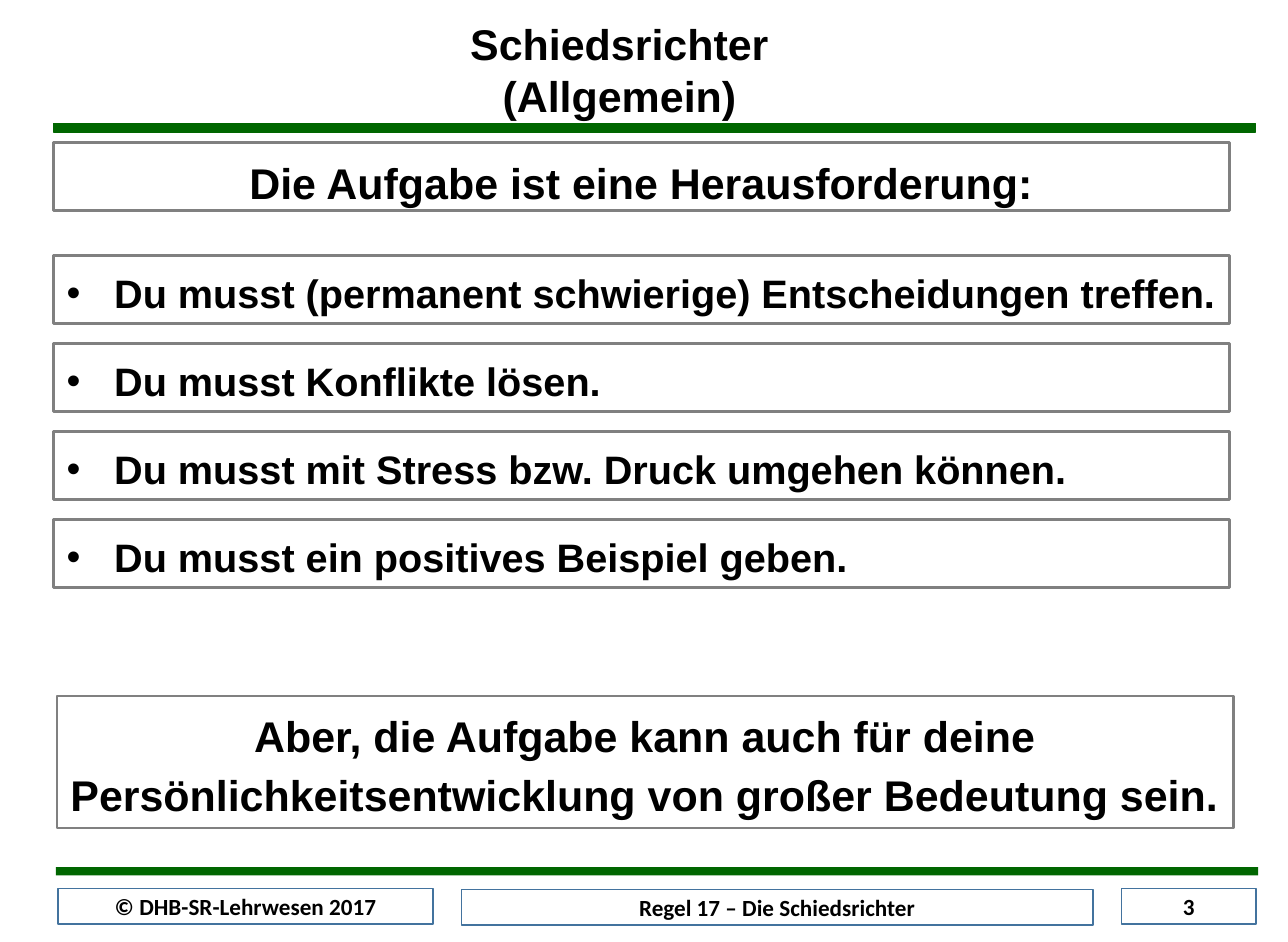
from lxml import etree
from pptx import Presentation
from pptx.dml.color import RGBColor
from pptx.enum.shapes import MSO_SHAPE
from pptx.enum.text import MSO_ANCHOR, PP_ALIGN
from pptx.oxml.ns import qn
from pptx.util import Inches, Pt

RECT = MSO_SHAPE.RECTANGLE
TOP, MIDDLE = MSO_ANCHOR.TOP, MSO_ANCHOR.MIDDLE
CENTER, JUSTIFY = PP_ALIGN.CENTER, PP_ALIGN.JUSTIFY
GREEN = RGBColor(0x00, 0x66, 0x00)
GRAY = RGBColor(0x80, 0x80, 0x80)
BLUE = RGBColor(0x43, 0x73, 0x9E)
WHITE = RGBColor(0xFF, 0xFF, 0xFF)
BLACK = RGBColor(0x00, 0x00, 0x00)

WIDE, HIGH = 10.83, 7.92
LEFT, SPAN = 0.45, 9.89
ROW, STEP = 0.57, 0.74
DUTIES = [
    "Du musst (permanent schwierige) Entscheidungen treffen.",
    "Du musst Konflikte lösen.",
    "Du musst mit Stress bzw. Druck umgehen können.",
    "Du musst ein positives Beispiel geben.",
]


def add_rect(slide, box, fill, line, width):
    rect = slide.shapes.add_shape(RECT, *map(Inches, box))
    rect.shadow.inherit = False
    rect.fill.solid()
    rect.fill.fore_color.rgb = fill
    rect.line.color.rgb = line
    rect.line.width = Pt(width)
    return rect


def write(shape, text, size, face="Arial", align=CENTER, anchor=TOP):
    frame = shape.text_frame
    frame.word_wrap = True
    frame.vertical_anchor = anchor
    frame.margin_left = frame.margin_right = Inches(0.11)
    frame.margin_top = frame.margin_bottom = Inches(0.05)
    frame.text = text
    para = frame.paragraphs[0]
    para.alignment = align
    font = para.runs[0].font
    font.name, font.size, font.bold = face, Pt(size), True
    font.color.rgb = BLACK
    return para


def add_bullet(para):
    props = para._p.get_or_add_pPr()
    props.set("marL", str(Inches(0.4)))
    props.set("indent", str(-Inches(0.4)))
    etree.SubElement(props, qn("a:buFont"), typeface="Arial")
    etree.SubElement(props, qn("a:buChar"), char="•")
    tabs = etree.SubElement(props, qn("a:tabLst"))
    etree.SubElement(tabs, qn("a:tab"), pos=str(Inches(0.54)), algn="l")


def add_panel(slide, box, text, size, align=CENTER):
    para = write(add_rect(slide, box, WHITE, GRAY, 1.5), text, size, align=align)
    para.line_spacing = 1.15
    para.space_after = Pt(10.7)
    return para


def add_header(slide, left, top, width):
    add_rect(slide, (left, top + 0.94, width, 0.07), GREEN, GREEN, 0.75)
    title = slide.shapes.add_textbox(*map(Inches, (3.84, top, 2.74, 0.98)))
    write(title, "Schiedsrichter (Allgemein)", 26)


def add_duties(slide, left, top, width):
    for row, duty in enumerate(DUTIES):
        box = (left, top + row * STEP, width, ROW)
        add_bullet(add_panel(slide, box, duty, 24, JUSTIFY))


def add_footer(slide, left, top, width):
    bar = add_rect(slide, (left, top, width, 0.07), GREEN, GREEN, 0.75)
    bar.line.fill.background()
    cells = [
        (0.02, 0.18, 3.15, "© DHB-SR-Lehrwesen 2017"),
        (3.41, 0.19, 5.31, "Regel 17 – Die Schiedsrichter"),
        (8.96, 0.18, 1.13, "3"),
    ]
    for shift, drop, wide, text in cells:
        cell = add_rect(slide, (left + shift, top + drop, wide, 0.3), WHITE, BLUE, 1)
        write(cell, text, 14, "Calibri", anchor=MIDDLE)


def main():
    deck = Presentation()
    deck.slide_width, deck.slide_height = Inches(WIDE), Inches(HIGH)
    slide = deck.slides.add_slide(deck.slide_layouts[6])
    add_header(slide, LEFT, 0.1, 10.11)
    add_panel(slide, (LEFT, 1.2, SPAN, ROW), "Die Aufgabe ist eine Herausforderung:", 26)
    add_duties(slide, LEFT, 2.15, SPAN)
    add_panel(
        slide,
        (0.48, 5.85, SPAN, 1.11),
        "Aber, die Aufgabe kann auch für deine "
        "Persönlichkeitsentwicklung von großer Bedeutung sein.",
        26,
    )
    add_footer(slide, 0.47, 7.29, 10.11)
    deck.save("out.pptx")


if __name__ == "__main__":
    main()
